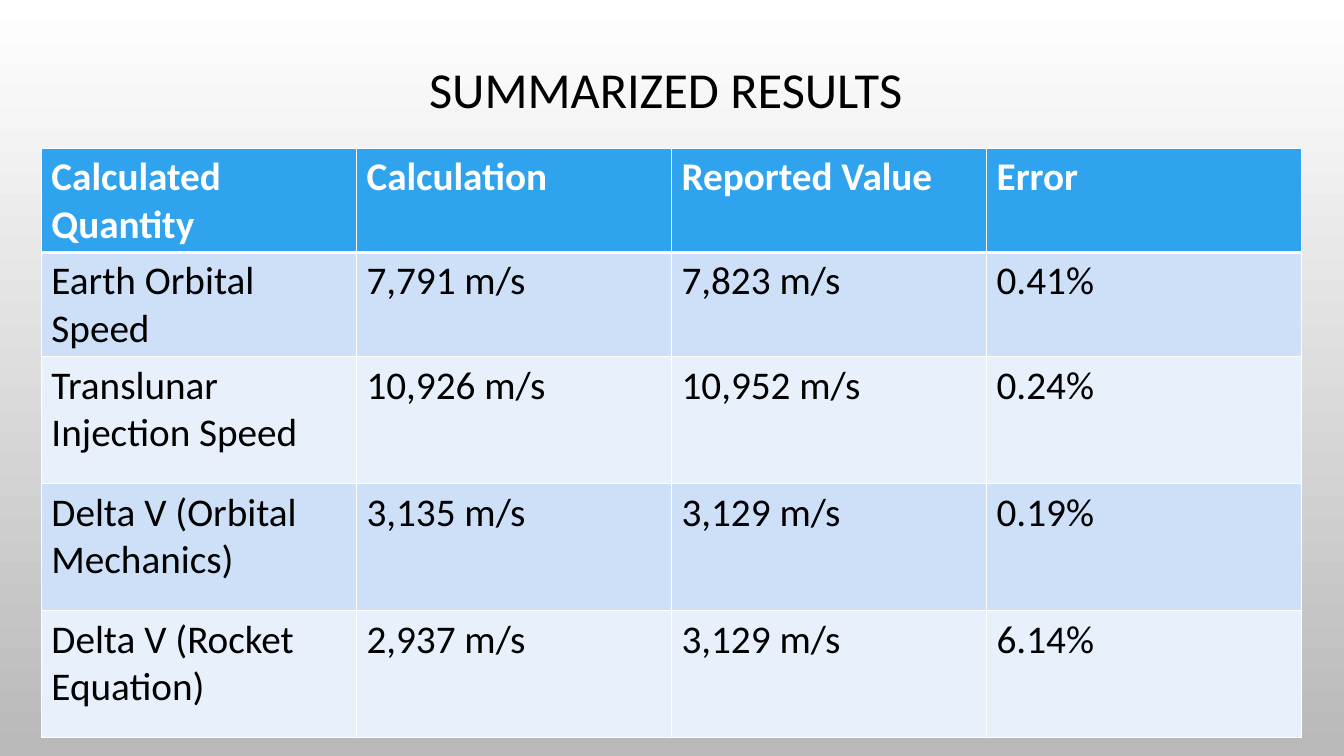
"""Build the slide of summarized results: a title over a table of speeds."""
from dataclasses import dataclass

from lxml.etree import SubElement
from pptx import Presentation
from pptx.dml.color import RGBColor
from pptx.enum.text import MSO_ANCHOR, PP_ALIGN
from pptx.oxml.ns import qn
from pptx.util import Emu, Inches, Pt


@dataclass(frozen=True)
class Theme:
    font: str = "Calibri"
    title: int = 36
    body: int = 28
    ink: str = "000000"
    white: str = "FFFFFF"
    head: str = "2FA3EE"
    bands: tuple[str, str] = ("CDE0F8", "E8F0FC")
    shade: tuple[str, str] = ("FFFFFF", "B9B9B9")
    thin: int = 1
    thick: int = 3


@dataclass(frozen=True)
class Box:
    left: float
    top: float
    width: float
    height: float


@dataclass(frozen=True)
class Row:
    cells: tuple[str, str, str, str]
    height: float


THEME = Theme()
WIDE, HIGH = Inches(13.33), Inches(7.5)
TITLE = Box(6.83, 2.53, 86.27, 19.33)
GRID = Box(3.08, 19.6, 93.77, 73.6)
LOW, TALL = 11.6, 16.8
ROWS = (
    Row(("Calculated Quantity", "Calculation", "Reported Value", "Error"), LOW),
    Row(("Earth Orbital Speed", "7,791 m/s", "7,823 m/s", "0.41%"), LOW),
    Row(("Translunar Injection Speed", "10,926 m/s", "10,952 m/s", "0.24%"), TALL),
    Row(("Delta V (Orbital Mechanics)", "3,135 m/s", "3,129 m/s", "0.19%"), TALL),
    Row(("Delta V (Rocket Equation)", "2,937 m/s", "3,129 m/s", "6.14%"), TALL),
)


def across(share: float) -> Emu:
    return Emu(round(WIDE * share / 100))


def down(share: float) -> Emu:
    return Emu(round(HIGH * share / 100))


def place(box: Box) -> tuple[Emu, Emu, Emu, Emu]:
    return across(box.left), down(box.top), across(box.width), down(box.height)


def write(frame, text: str, *, size: int, color: str = THEME.ink,
          bold: bool = False, align=PP_ALIGN.LEFT, lines: float = 1.0) -> None:
    frame.word_wrap = True
    line = frame.paragraphs[0]
    line.alignment = align
    line.line_spacing = lines
    run = line.add_run()
    run.text = text
    run.font.name = THEME.font
    run.font.size = Pt(size)
    run.font.bold = bold
    run.font.color.rgb = RGBColor.from_string(color)


def edge(cell, side: str, width: int) -> None:
    line = SubElement(cell._tc.get_or_add_tcPr(), qn(f"a:ln{side}"), w=str(Pt(width)))
    fill = SubElement(line, qn("a:solidFill"))
    SubElement(fill, qn("a:srgbClr"), val=THEME.white)


def paint(slide) -> None:
    fill = slide.background.fill
    fill.gradient()
    fill.gradient_angle = 270
    for stop, color, spot in zip(fill.gradient_stops, THEME.shade, (0, 1)):
        stop.color.rgb = RGBColor.from_string(color)
        stop.position = spot


def add_title(slide, text: str) -> None:
    frame = slide.shapes.add_textbox(*place(TITLE)).text_frame
    frame.vertical_anchor = MSO_ANCHOR.MIDDLE
    write(frame, text, size=THEME.title, align=PP_ALIGN.CENTER, lines=0.9)


def add_grid(slide, rows: tuple[Row, ...]) -> None:
    count = len(rows[0].cells)
    table = slide.shapes.add_table(len(rows), count, *place(GRID)).table
    for column in table.columns:
        column.width = across(GRID.width / count)
    for at, row in enumerate(rows):
        table.rows[at].height = down(row.height)
        head = at == 0
        shade = THEME.head if head else THEME.bands[(at - 1) % 2]
        widths = {"L": THEME.thin, "R": THEME.thin,
                  "T": THEME.thick if at == 1 else THEME.thin,
                  "B": THEME.thick if head else THEME.thin}
        for cell, text in zip(table.rows[at].cells, row.cells):
            for side, width in widths.items():
                edge(cell, side, width)
            cell.fill.solid()
            cell.fill.fore_color.rgb = RGBColor.from_string(shade)
            write(cell.text_frame, text, size=THEME.body, bold=head,
                  color=THEME.white if head else THEME.ink)


def main() -> None:
    deck = Presentation()
    deck.slide_width, deck.slide_height = WIDE, HIGH
    slide = deck.slides.add_slide(deck.slide_layouts[6])
    paint(slide)
    add_title(slide, "SUMMARIZED RESULTS ")
    add_grid(slide, ROWS)
    deck.save("out.pptx")


if __name__ == "__main__":
    main()
